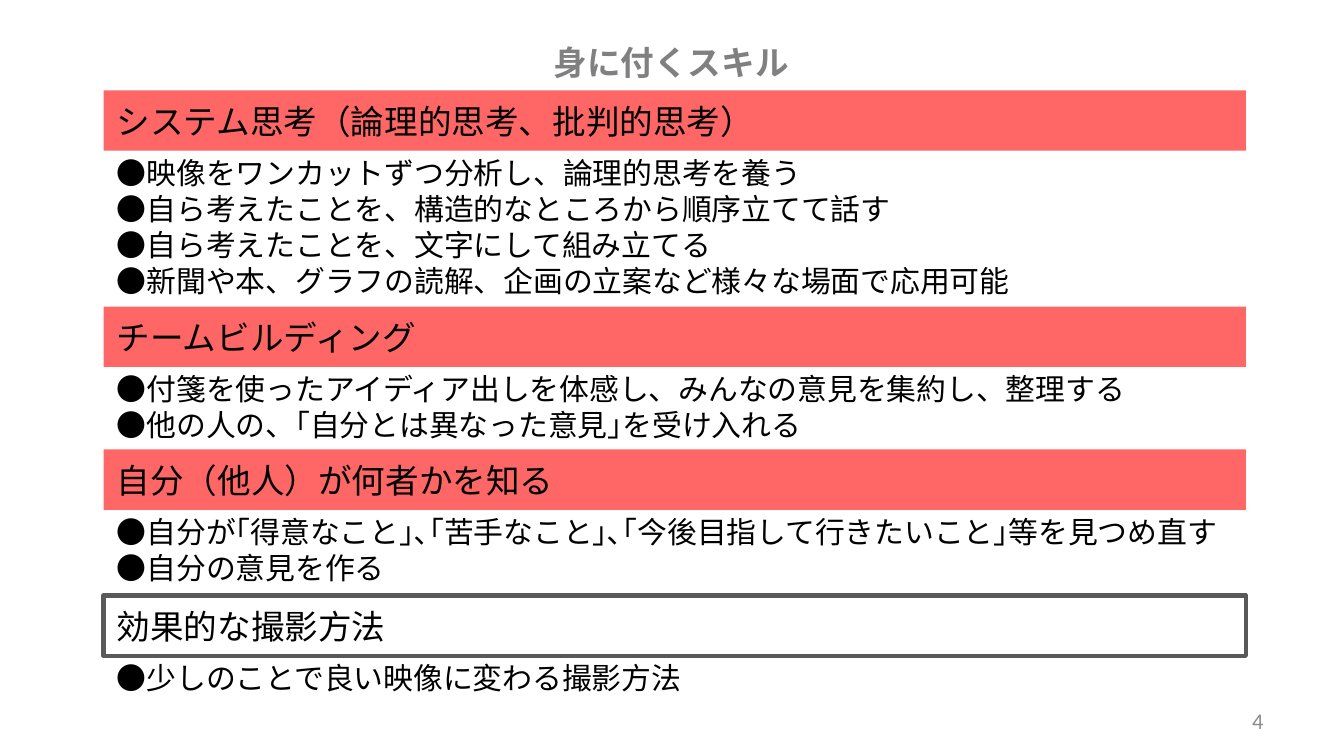
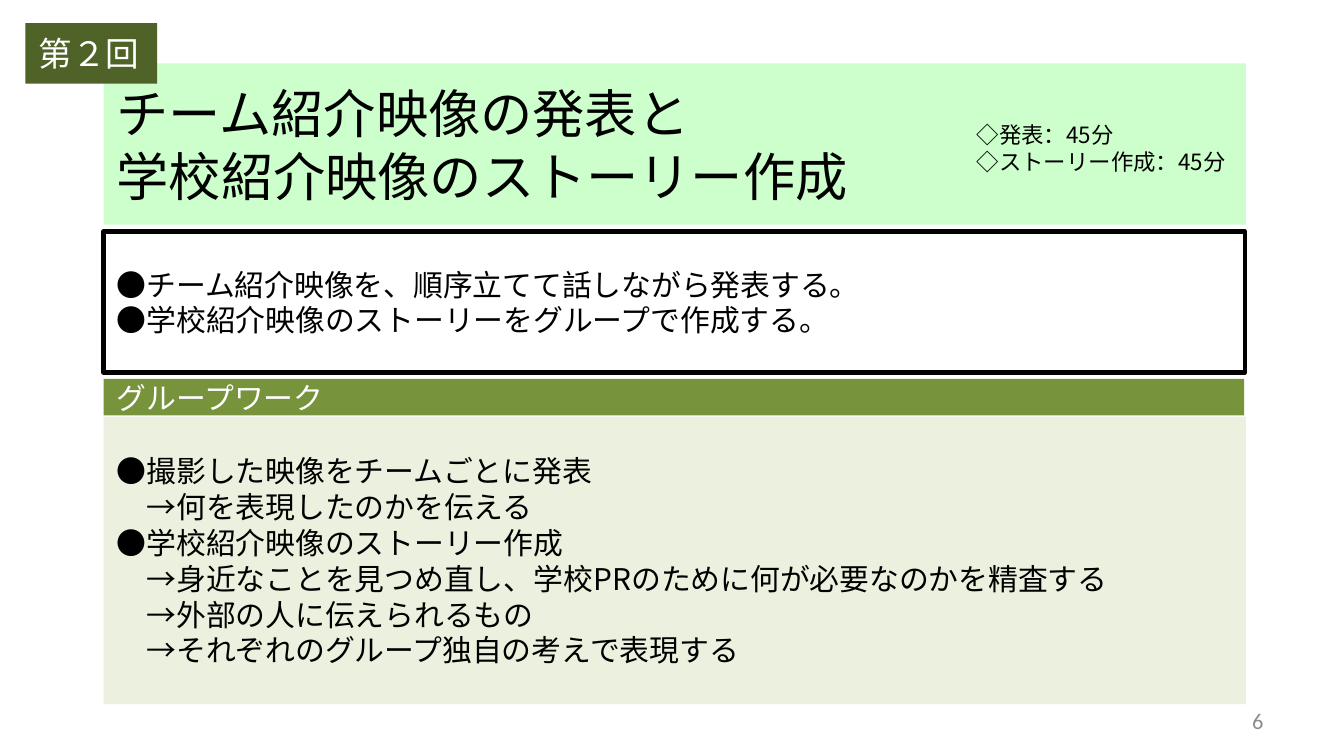
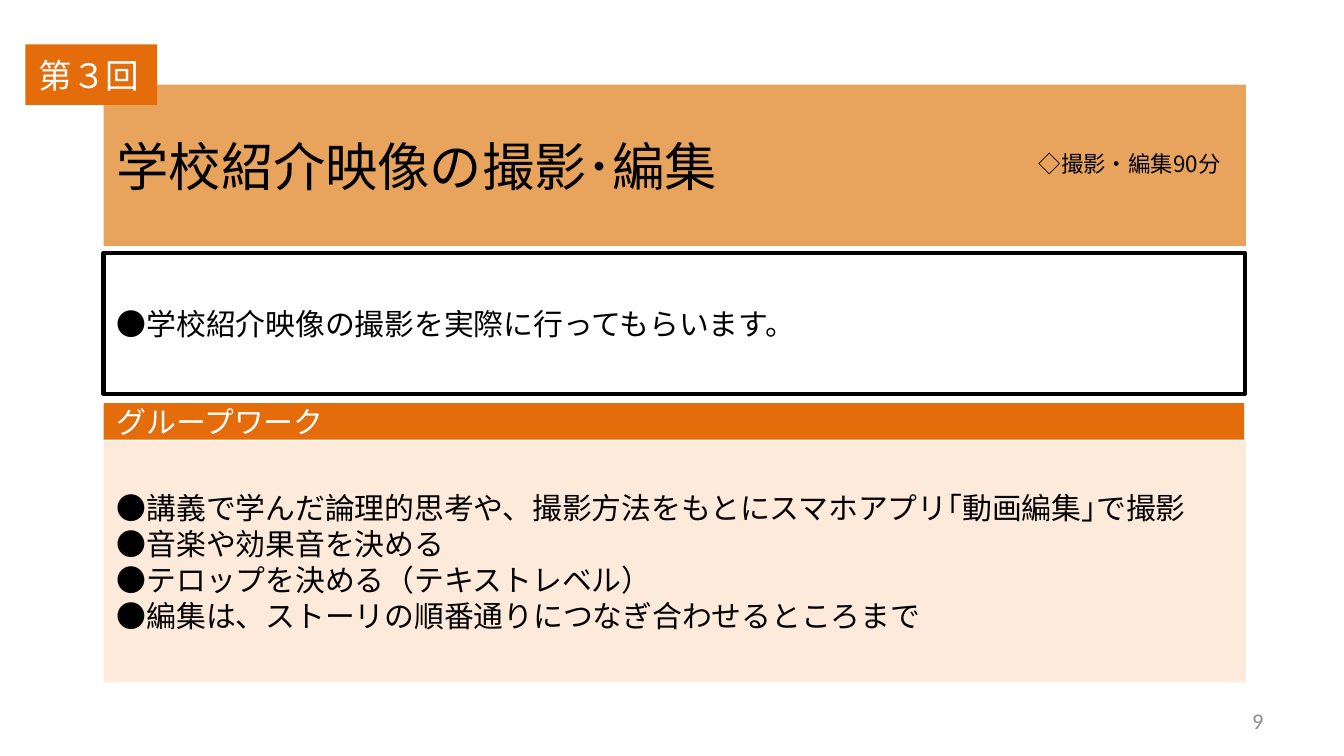
import dataclasses

import lxml.etree
import pptx
import pptx.dml.color
import pptx.enum.shapes
import pptx.enum.text
import pptx.oxml.ns
import pptx.util

Pt = pptx.util.Pt
MIDDLE = pptx.enum.text.MSO_ANCHOR.MIDDLE
RIGHT = pptx.enum.text.PP_ALIGN.RIGHT
GROW = pptx.enum.text.MSO_AUTO_SIZE.SHAPE_TO_FIT_TEXT
RECT = pptx.enum.shapes.MSO_SHAPE.RECTANGLE


@dataclasses.dataclass(frozen=True)
class Theme:
    font: str = "Noto Sans CJK JP"
    digits: str = "Calibri"
    black: str = "000000"
    white: str = "FFFFFF"
    title: str = "808080"
    page: str = "8C8C8C"
    skill: str = "FF6666"
    frame: str = "595959"
    small: int = 12
    body: int = 16
    head: int = 18
    large: int = 28
    edge: float = 2.25


@dataclasses.dataclass(frozen=True)
class Tones:
    title: str
    badge: str
    bar: str
    body: str


THEME = Theme()
GREEN = Tones("CCFFCC", "4F6228", "77933C", "EBF1DE")
ORANGE = Tones("E8A45C", "E46C0A", "E46C0A", "FDEADA")
LEFT, WIDTH = 55.5, 612
BAND = 32.4


def apply(target, values):
    for name, value in values.items():
        setattr(target, name, value)


def color(code):
    return pptx.dml.color.RGBColor.from_string(code)


def write(frame, lines, size, ink=THEME.black, font=THEME.font, align=None, **style):
    """Fill a text frame; lines that open with an arrow are indented."""
    for index, line in enumerate(lines):
        para = frame.paragraphs[0] if index == 0 else frame.add_paragraph()
        para.alignment = align or pptx.enum.text.PP_ALIGN.LEFT
        if line.startswith("→"):
            para._p.get_or_add_pPr().set("marL", str(Pt(size)))
        run = para.add_run()
        run.text = line
        apply(run.font, {"name": font, "size": Pt(size), **style})
        run.font.color.rgb = color(ink)
        east = lxml.etree.SubElement(run._r.get_or_add_rPr(), pptx.oxml.ns.qn("a:ea"))
        east.set("typeface", font)


def panel(slide, box, lines, size, fill=None, edge=None, ink=THEME.black):
    shape = slide.shapes.add_shape(RECT, *map(Pt, box))
    shape.shadow.inherit = False
    if fill:
        shape.fill.solid()
        shape.fill.fore_color.rgb = color(fill)
    else:
        shape.fill.background()
    if edge:
        shape.line.color.rgb = color(edge)
        shape.line.width = Pt(THEME.edge)
    else:
        shape.line.fill.background()
    apply(shape.text_frame, {"word_wrap": True, "vertical_anchor": MIDDLE})
    write(shape.text_frame, lines, size, ink)


def label(slide, box, lines, size, frame=None, **style):
    text = slide.shapes.add_textbox(*map(Pt, box)).text_frame
    apply(text, {"word_wrap": True, "auto_size": GROW, **(frame or {})})
    write(text, lines, size, **style)


def footer(slide, number):
    label(slide, (516, 375, 168, 21.6), [str(number)], THEME.small,
          {"auto_size": pptx.enum.text.MSO_AUTO_SIZE.NONE, "vertical_anchor": MIDDLE},
          ink=THEME.page, font=THEME.digits, align=RIGHT)


def skill(slide, box, head, lines, framed=False):
    """Heading band with its list just below."""
    left, top, width, height = box
    look = {"edge": THEME.frame} if framed else {"fill": THEME.skill}
    panel(slide, box, [head], THEME.head, **look)
    label(slide, (left, top + height - 1.4, width, 7.2 + 19.4 * len(lines)),
          lines, THEME.body)


def skills(slide, title, groups, number):
    label(slide, (289.4, 18.7, 142.6, 29), [title], THEME.head,
          {"word_wrap": False}, ink=THEME.title, bold=True)
    for top, head, lines, framed in groups:
        skill(slide, (LEFT, top, WIDTH, BAND), head, lines, framed)
    footer(slide, number)


def work(slide, box, lines, tones):
    """Group work: the task panel under a slim bar."""
    left, top, width, height = box
    panel(slide, (left, top + 20.2, width, height - 20.2), lines, THEME.body, tones.body)
    panel(slide, (left, top, width - 1, 19.6), ["グループワーク"], THEME.body,
          tones.bar, ink=THEME.white)


def lesson(slide, top, tones, badge, title, note, note_box, goals, task, task_box, number):
    # Title panel with time note and badge
    panel(slide, (LEFT, top, WIDTH, 86.4), title, THEME.large, tones.title)
    label(slide, note_box, note, THEME.small, {"word_wrap": False})
    panel(slide, (13.6, top - 21.6, 70.6, BAND), [badge], THEME.head,
          tones.badge, ink=THEME.white)
    # Group work, page number and goals
    work(slide, task_box, task, tones)
    footer(slide, number)
    panel(slide, (LEFT, top + 90, WIDTH - 0.5, 75.6), goals, THEME.body, edge=THEME.black)


def main():
    deck = pptx.Presentation()
    apply(deck, {"slide_width": Pt(720), "slide_height": Pt(405)})

    def blank():
        return deck.slides.add_slide(deck.slide_layouts[6])

    # Skills
    skills(blank(), "身に付くスキル", [
        (48.4, "システム思考（論理的思考、批判的思考）", [
            "●映像をワンカットずつ分析し、論理的思考を養う",
            "●自ら考えたことを、構造的なところから順序立てて話す",
            "●自ら考えたことを、文字にして組み立てる",
            "●新聞や本、グラフの読解、企画の立案など様々な場面で応用可能"], False),
        (164.2, "チームビルディング", [
            "●付箋を使ったアイディア出しを体感し、みんなの意見を集約し、整理する",
            "●他の人の、｢自分とは異なった意見｣を受け入れる"], False),
        (240.8, "自分（他人）が何者かを知る", [
            "●自分が｢得意なこと｣､｢苦手なこと｣､｢今後目指して行きたいこと｣等を見つめ直す",
            "●自分の意見を作る"], False),
        (319, "効果的な撮影方法", ["●少しのことで良い映像に変わる撮影方法"], True),
    ], 4)

    # Second lesson
    lesson(
        blank(), 34, GREEN, "第２回",
        ["チーム紹介映像の発表と", "学校紹介映像のストーリー作成"],
        ["◇発表：45分", "◇ストーリー作成：45分"], (516.2, 61.2, 154, 36),
        ["●チーム紹介映像を、順序立てて話しながら発表する。",
         "●学校紹介映像のストーリーをグループで作成する。"],
        ["●撮影した映像をチームごとに発表",
         "→何を表現したのかを伝える",
         "●学校紹介映像のストーリー作成",
         "→身近なことを見つめ直し、学校PRのために何が必要なのかを精査する",
         "→外部の人に伝えられるもの",
         "→それぞれのグループ独自の考えで表現する"],
        (LEFT, 203, WIDTH, 174.2), 6)

    # Third lesson
    lesson(
        blank(), 45.4, ORANGE, "第３回", ["学校紹介映像の撮影･編集"],
        ["◇撮影・編集90分"], (549.4, 77, 117.4, 21.6),
        ["●学校紹介映像の撮影を実際に行ってもらいます。"],
        ["●講義で学んだ論理的思考や、撮影方法をもとにスマホアプリ｢動画編集｣で撮影",
         "●音楽や効果音を決める",
         "●テロップを決める（テキストレベル）",
         "●編集は、ストーリの順番通りにつなぎ合わせるところまで"],
        (LEFT, 216, WIDTH, 149.6), 9)

    deck.save("out.pptx")


if __name__ == "__main__":
    main()
